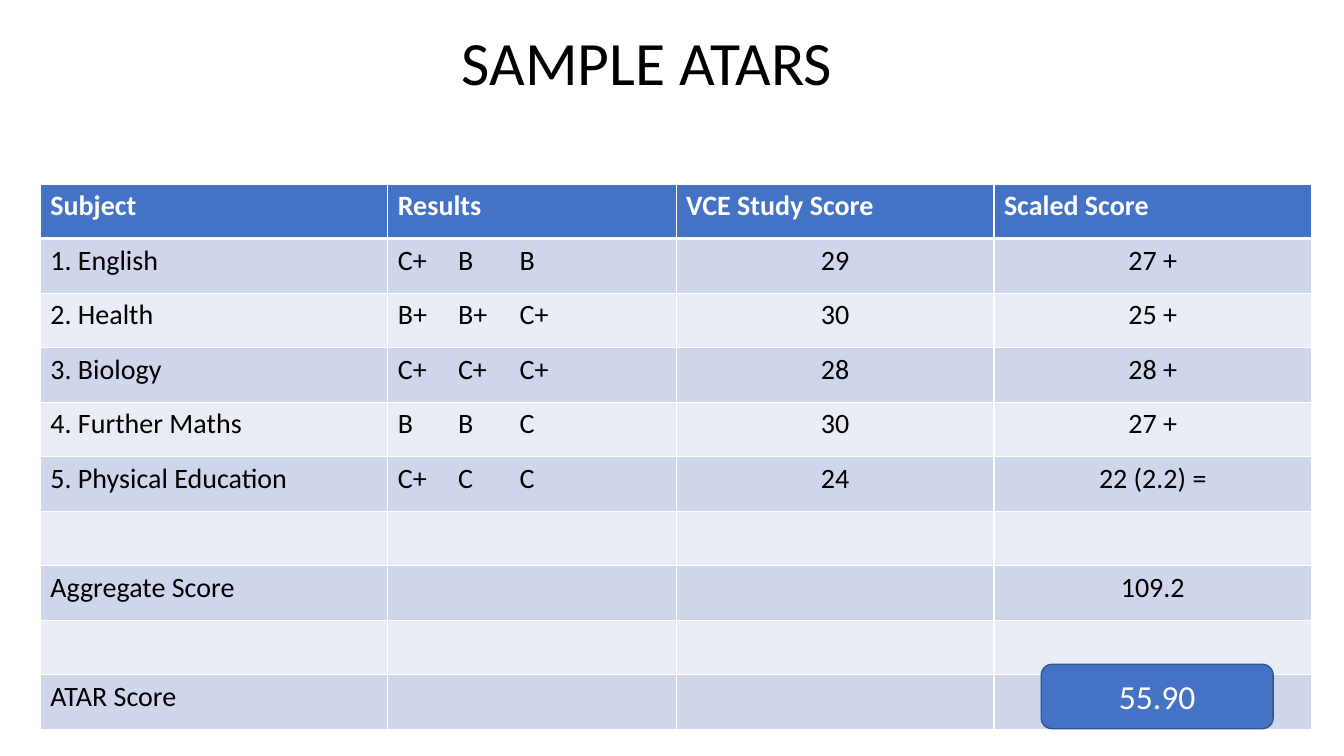
from lxml import etree
from pptx import Presentation
from pptx import util as u
from pptx.dml.color import RGBColor
from pptx.enum import shapes, text
from pptx.oxml import ns

Pt = u.Pt
LEFT, CENTER = text.PP_ALIGN.LEFT, text.PP_ALIGN.CENTER


def rgb(value):
    return RGBColor.from_string(value)


def add_run(p, words, size, color, bold=False):
    r = p.add_run()
    r.text = words
    r.font.name = "Calibri"
    r.font.size = Pt(size)
    r.font.bold = bold
    r.font.color.rgb = rgb(color)


prs = Presentation()
prs.slide_width, prs.slide_height = Pt(960), Pt(540)
s = prs.slides.add_slide(prs.slide_layouts[5])

# Title
title = s.shapes.title
title.left, title.top, title.width, title.height = Pt(190.8), Pt(18), Pt(553), Pt(58.3)
tf = title.text_frame
tf.word_wrap = True
tf.auto_size = text.MSO_AUTO_SIZE.NONE
tf.vertical_anchor = text.MSO_ANCHOR.MIDDLE
p = tf.paragraphs[0]
p.alignment = CENTER
p.line_spacing = 0.9
add_run(p, "SAMPLE ATARS ", 44, "000000")

# Score table
rows = [
    ("Subject", "Results", "VCE Study Score", "Scaled Score"),
    ("1. English", "C+\tB\tB", "29", "27 +"),
    ("2. Health", "B+\tB+\tC+", "30", "25 +"),
    ("3. Biology", "C+\tC+\tC+", "28", "28 +"),
    ("4. Further Maths", "B\tB\tC", "30", "27 +"),
    ("5. Physical Education", "C+\tC\tC", "24", "22 (2.2) ="),
    ("", "", "", ""),
    ("Aggregate Score", "", "", "109.2"),
    ("", "", "", ""),
    ("ATAR Score", "", "", ""),
]
widths = [248.2, 206, 227, 227]
row_height = 38.95
grade_tabs = [43, 87]

frame = s.shapes.add_table(len(rows), len(widths), Pt(28.8), Pt(131.5),
                           Pt(sum(widths)), Pt(row_height * len(rows)))
table = frame.table
for column, width in zip(table.columns, widths):
    column.width = Pt(width)

for i, row in enumerate(rows):
    header = i == 0
    table.rows[i].height = Pt(row_height)
    fill = "4472C4" if header else ("CFD5EA" if i % 2 else "E9EBF5")
    for j, words in enumerate(row):
        cell = table.cell(i, j)
        cell.fill.solid()
        cell.fill.fore_color.rgb = rgb(fill)

        # White borders, thicker below the header
        tc_pr = cell.fill._xPr
        for k, side in enumerate(("lnL", "lnR", "lnT", "lnB")):
            thick = (header and side == "lnB") or (i == 1 and side == "lnT")
            ln = etree.Element(ns.qn(f"a:{side}"), w=str(Pt(3 if thick else 1)))
            solid = etree.SubElement(ln, ns.qn("a:solidFill"))
            etree.SubElement(solid, ns.qn("a:srgbClr"), val="FFFFFF")
            tc_pr.insert(k, ln)

        p = cell.text_frame.paragraphs[0]
        p.alignment = CENTER if j > 1 and not header else LEFT
        if "\t" in words:
            tabs = etree.SubElement(p._p.get_or_add_pPr(), ns.qn("a:tabLst"))
            for pos in grade_tabs:
                etree.SubElement(tabs, ns.qn("a:tab"), pos=str(Pt(pos)), algn="l")
        if words:
            add_run(p, words, 20, "FFFFFF" if header else "000000", header)

# ATAR result
sp = s.shapes.add_shape(shapes.MSO_SHAPE.ROUNDED_RECTANGLE,
                        Pt(743.8), Pt(474.5), Pt(165.6), Pt(46))
sp.shadow.inherit = False
sp.fill.solid()
sp.fill.fore_color.rgb = rgb("4472C4")
sp.line.color.rgb = rgb("325491")
sp.line.width = Pt(1)
tf = sp.text_frame
tf.vertical_anchor = text.MSO_ANCHOR.MIDDLE
p = tf.paragraphs[0]
p.alignment = CENTER
add_run(p, "55.90", 24, "FFFFFF")

prs.save("out.pptx")
